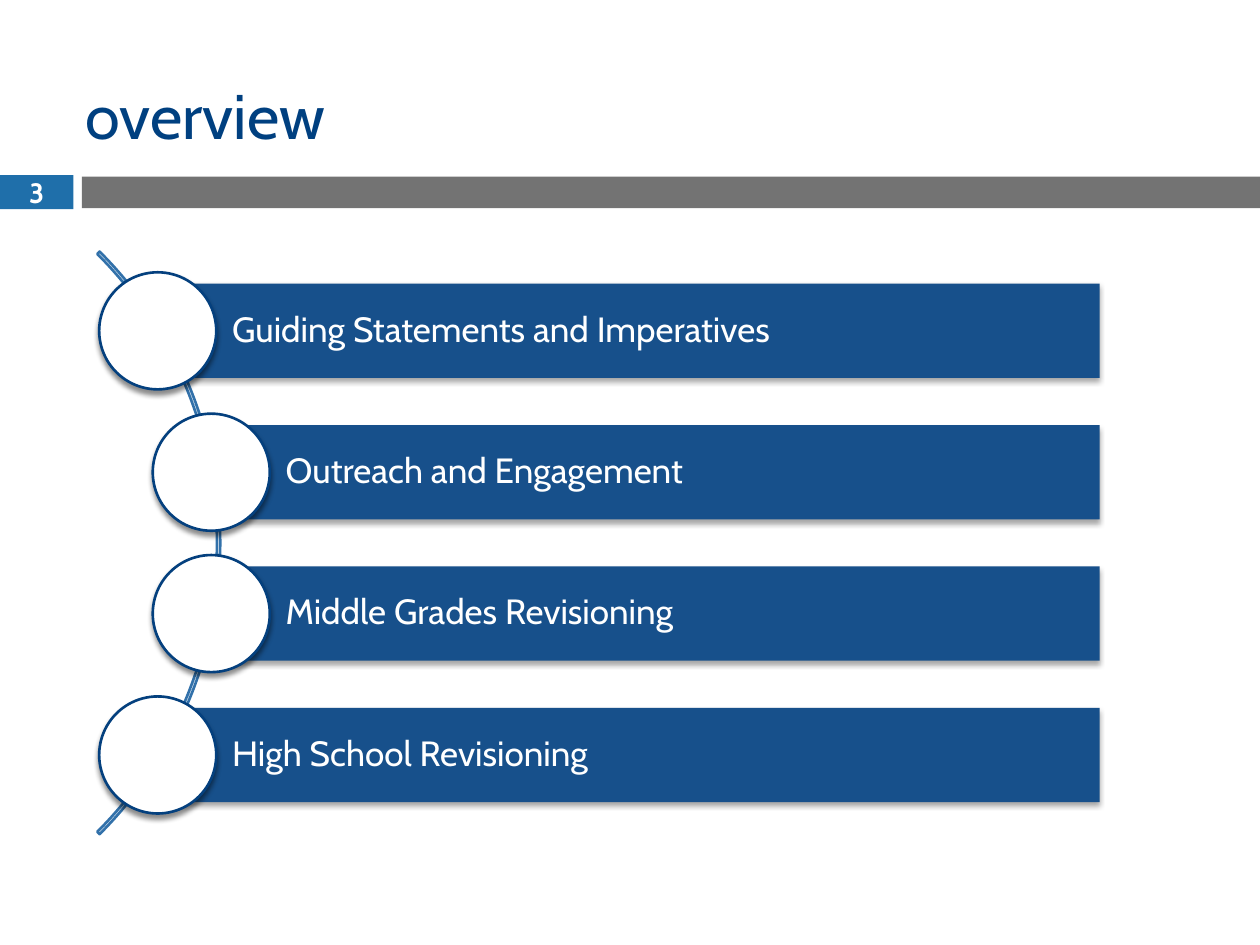
from lxml import etree
from pptx import Presentation
from pptx.dml.color import RGBColor
from pptx.enum.shapes import MSO_SHAPE
from pptx.enum.text import MSO_ANCHOR, PP_ALIGN
from pptx.oxml.ns import qn
from pptx.util import Cm, Pt

RECT, OVAL, ARC = MSO_SHAPE.RECTANGLE, MSO_SHAPE.OVAL, MSO_SHAPE.BLOCK_ARC
LEFT, CENTER = PP_ALIGN.LEFT, PP_ALIGN.CENTER
MIDDLE = MSO_ANCHOR.MIDDLE

NAVY = RGBColor(0x00, 0x40, 0x80)
RING = RGBColor(0x04, 0x40, 0x7E)
BAR = RGBColor(0x17, 0x50, 0x8B)
ARC_BLUE = RGBColor(0x32, 0x71, 0xAA)
TAG_BLUE = RGBColor(0x1F, 0x6F, 0xAA)
GRAY = RGBColor(0x73, 0x73, 0x73)
WHITE = RGBColor(0xFF, 0xFF, 0xFF)
FONT = "Cabin"

# Content
TITLE = "overview"
PAGE = "3"
OUTER, INNER = 3.18, 4.26  # bar left edges along the arc, cm
TOPICS = [
    ("Guiding Statements and Imperatives", OUTER),
    ("Outreach and Engagement", INNER),
    ("Middle Grades Revisioning", INNER),
    ("High School Revisioning", OUTER),
]

# Layout, cm
BAR_TOP, BAR_H, BAR_RIGHT, PITCH = 5.72, 1.9, 22.17, 2.85
DISC = 2.36


def add_shape(s, kind, x, y, w, h, fill=None, line=None):
    sp = s.shapes.add_shape(kind, Cm(x), Cm(y), Cm(w), Cm(h))
    sp.shadow.inherit = False
    if fill is None:
        sp.fill.background()
    else:
        sp.fill.solid()
        sp.fill.fore_color.rgb = fill
    if line is None:
        sp.line.fill.background()
    else:
        sp.line.color.rgb = line
        sp.line.width = Pt(1.5)
    return sp


def add_shadow(sp, distance, opacity):
    effects = sp._element.spPr.find(qn("a:effectLst"))
    shadow = etree.SubElement(
        effects, qn("a:outerShdw"), blurRad=str(Pt(3)),
        dist=str(Pt(distance)), dir="5400000", rotWithShape="0")
    color = etree.SubElement(shadow, qn("a:srgbClr"), val="000000")
    etree.SubElement(color, qn("a:alpha"), val=str(opacity * 1000))


def write(sp, text, size, color, align=LEFT, bold=False):
    tf = sp.text_frame
    tf.word_wrap = True
    tf.vertical_anchor = MIDDLE
    p = tf.paragraphs[0]
    p.alignment = align
    r = p.add_run()
    r.text = text
    r.font.name, r.font.size, r.font.bold = FONT, Pt(size), bold
    r.font.color.rgb = color
    return tf


prs = Presentation()
prs.slide_width, prs.slide_height = Cm(25.4), Cm(19.05)
s = prs.slides.add_slide(prs.slide_layouts[6])

# Header band, page number and title
add_shape(s, RECT, 1.65, 3.56, 23.75, 0.64, GRAY)
tag = add_shape(s, RECT, 0, 3.53, 1.48, 0.69, TAG_BLUE)
tf = write(tag, PAGE, 16, WHITE, CENTER, True)
tf.margin_left = tf.margin_right = tf.margin_top = tf.margin_bottom = 0
title = s.shapes.add_textbox(Cm(1.48), Cm(1.57), Cm(22.25), Cm(1.48))
write(title, TITLE, 36, NAVY)

# Arc behind the topics
arc = add_shape(s, ARC, -12.17, 2.64, 16.61, 16.61, line=ARC_BLUE)
for i, value in enumerate((189, 27, 0.004)):
    arc.adjustments[i] = value

# Topic bars, each with a disc centred on its left edge
for i, (topic, x) in enumerate(TOPICS):
    y = BAR_TOP + i * PITCH
    bar = add_shape(s, RECT, x, y, BAR_RIGHT - x, BAR_H, BAR)
    add_shadow(bar, 2, 35)
    tf = write(bar, topic, 20, WHITE)
    tf.margin_left = Cm(1.5)
    tf.margin_right = tf.margin_top = tf.margin_bottom = Cm(0.15)
    tf.paragraphs[0].line_spacing = 0.9
    disc = add_shape(s, OVAL, x - DISC / 2, y + (BAR_H - DISC) / 2,
                     DISC, DISC, WHITE, RING)
    add_shadow(disc, 2.4, 45)

prs.save("out.pptx")
